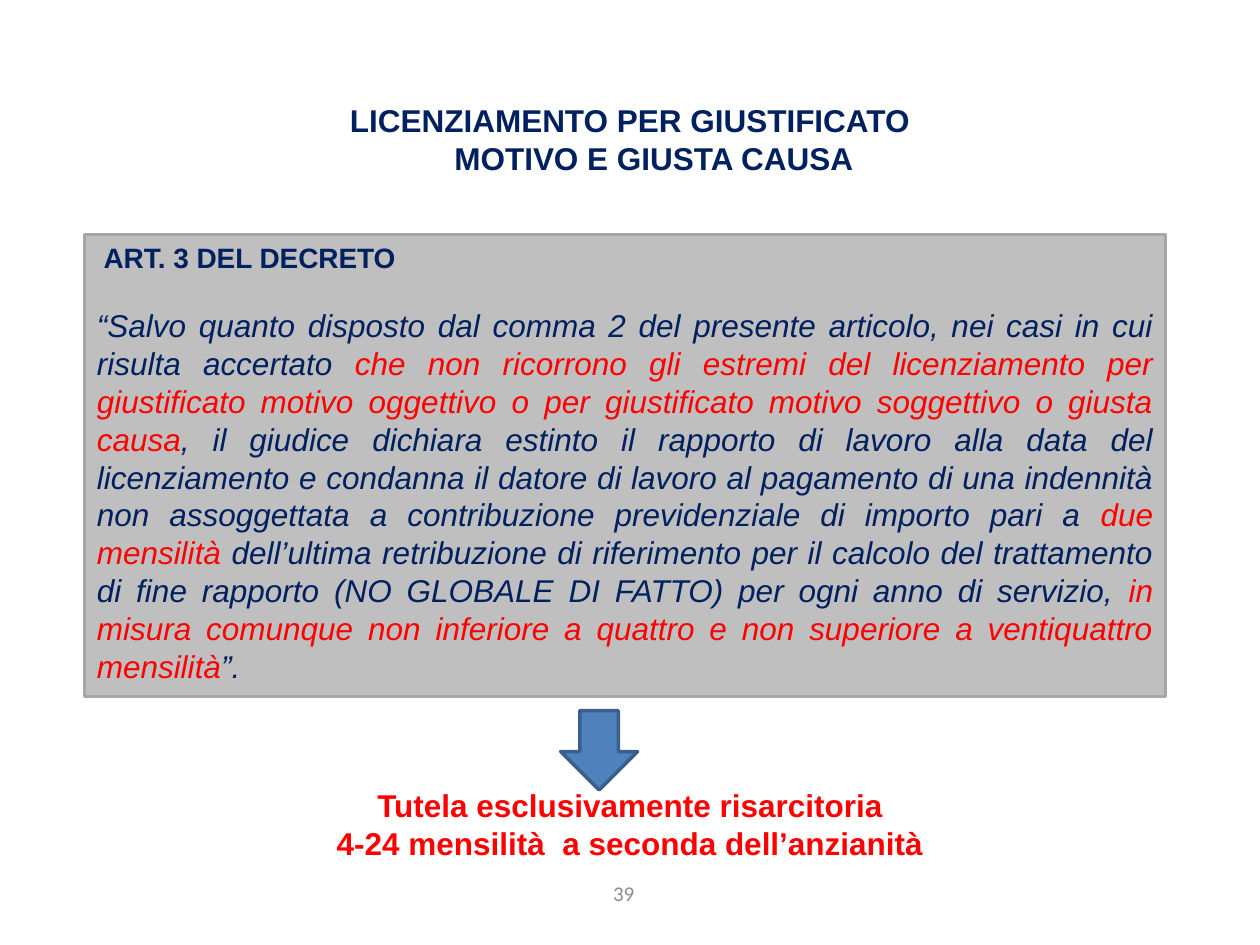
from dataclasses import dataclass

from pptx import Presentation
from pptx.dml.color import RGBColor as Color
from pptx.enum.shapes import MSO_SHAPE as Shape
from pptx.enum.text import MSO_ANCHOR as Anchor, PP_ALIGN as Align
from pptx.util import Inches, Pt


@dataclass(frozen=True)
class Theme:
    navy: str = "002060"
    red: str = "FF0000"
    number: str = "8C8C8C"
    panel: str = "BFBFBF"
    panel_line: str = "A6A6A6"
    arrow: str = "4F81BD"
    arrow_line: str = "3A5F8C"
    font: str = "Arial"
    number_font: str = "Calibri"
    body: int = 18
    heading: int = 16
    small: int = 12
    stroke: int = 2


THEME = Theme()
WIDTH, HEIGHT = 10, 7.5
CENTRE_LEFT, CENTRE_WIDTH = 0.25, 0.5

ARTICLE = [
    ("“Salvo quanto disposto dal comma 2 del presente articolo, nei casi in cui "
     "risulta accertato ", THEME.navy),
    ("che non ricorrono gli estremi del licenziamento per giustificato motivo "
     "oggettivo o per giustificato motivo soggettivo o giusta causa", THEME.red),
    (", il giudice dichiara estinto il rapporto di lavoro alla data del licenziamento "
     "e condanna il datore di lavoro al pagamento di una indennità non assoggettata "
     "a contribuzione previdenziale di importo pari a ", THEME.navy),
    ("due mensilità ", THEME.red),
    ("dell’ultima retribuzione di riferimento per il calcolo del trattamento di fine "
     "rapporto (NO GLOBALE DI FATTO) per ogni anno di servizio, ", THEME.navy),
    ("in misura comunque non inferiore a quattro e non superiore a ventiquattro "
     "mensilità", THEME.red),
    ("”.", THEME.navy),
]


def place(left, top, width, height):
    return [Inches(share * side) for share, side in
            zip((left, top, width, height), (WIDTH, HEIGHT, WIDTH, HEIGHT))]


def add_text_box(page, area, anchor=Anchor.TOP):
    frame = page.shapes.add_textbox(*place(*area)).text_frame
    frame.word_wrap = True
    frame.vertical_anchor = anchor
    return frame


def add_filled_shape(page, kind, area, fill, line):
    shape = page.shapes.add_shape(kind, *place(*area))
    shape.shadow.inherit = False
    shape.fill.solid()
    shape.fill.fore_color.rgb = Color.from_string(fill)
    shape.line.color.rgb = Color.from_string(line)
    shape.line.width = Pt(THEME.stroke)
    return shape


def write(para, spans, align=Align.CENTER, **formats):
    para.alignment = align
    settings = {"name": THEME.font, "size": Pt(THEME.body)} | formats
    for text, color in spans:
        span = para.add_run()
        span.text = text
        for name, value in settings.items():
            setattr(span.font, name, value)
        span.font.color.rgb = Color.from_string(color)


def draw_title(page, area):
    para = add_text_box(page, area).paragraphs[0]
    write(para, [("LICENZIAMENTO PER GIUSTIFICATO MOTIVO E GIUSTA CAUSA", THEME.navy)],
          bold=True)
    hanging = Inches(0.38)
    properties = para._p.get_or_add_pPr()
    for name, value in {"marL": hanging, "indent": -hanging}.items():
        properties.set(name, str(value))


def draw_article(page, area):
    panel = add_filled_shape(page, Shape.RECTANGLE, area, THEME.panel, THEME.panel_line)
    frame = panel.text_frame
    frame.word_wrap = True
    frame.vertical_anchor = Anchor.TOP
    heading = frame.paragraphs[0]
    write(heading, [(" ART. 3 DEL DECRETO", THEME.navy)], Align.JUSTIFY,
          size=Pt(THEME.heading), bold=True)
    heading.space_after = Pt(18.4)
    write(frame.add_paragraph(), ARTICLE, Align.JUSTIFY, italic=True)


def draw_arrow(page, area):
    add_filled_shape(page, Shape.DOWN_ARROW, area, THEME.arrow, THEME.arrow_line)


def draw_outcome(page, area):
    frame = add_text_box(page, area)
    lines = ("Tutela esclusivamente risarcitoria",
             "4-24 mensilità  a seconda dell’anzianità")
    for index, line in enumerate(lines):
        para = frame.add_paragraph() if index else frame.paragraphs[0]
        write(para, [(line, THEME.red)], bold=True)


def draw_page_number(page, area):
    para = add_text_box(page, area, Anchor.MIDDLE).paragraphs[0]
    write(para, [("39", THEME.number)], name=THEME.number_font, size=Pt(THEME.small))


def main():
    deck = Presentation()
    deck.slide_width, deck.slide_height = Inches(WIDTH), Inches(HEIGHT)
    page = deck.slides.add_slide(deck.slide_layouts[6])
    draw_page_number(page, (0.38, 0.92, 0.23, 0.05))
    draw_title(page, (CENTRE_LEFT, 0.1, CENTRE_WIDTH, 0.1))
    draw_article(page, (0.067, 0.248, 0.858, 0.489))
    draw_arrow(page, (0.445, 0.752, 0.061, 0.084))
    draw_outcome(page, (CENTRE_LEFT, 0.825, CENTRE_WIDTH, 0.095))
    deck.save("out.pptx")


if __name__ == "__main__":
    main()
